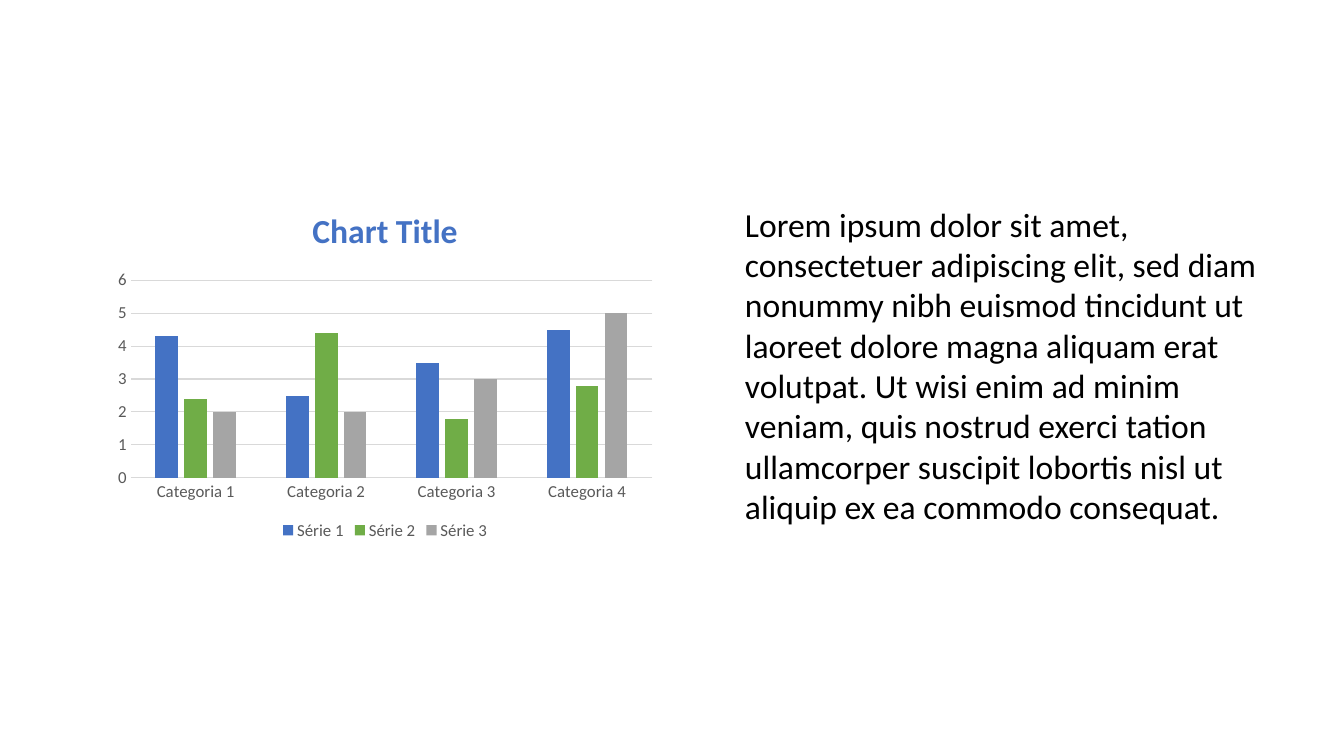
from dataclasses import dataclass

from pptx import Presentation
from pptx.chart import data as cd
from pptx.dml.color import RGBColor
from pptx.enum import chart as ce, text as te
from pptx.util import Inches, Pt

FONT = "Calibri"
BLUE, GREY, PALE = "4472C4", "595959", "D9D9D9"


@dataclass
class Series:
    name: str
    vals: tuple[float, ...]
    color: str


CATS = [f"Categoria {n}" for n in range(1, 5)]
SERIES = [
    Series("Série 1", (4.3, 2.5, 3.5, 4.5), BLUE),
    Series("Série 2", (2.4, 4.4, 1.8, 2.8), "70AD47"),
    Series("Série 3", (2, 2, 3, 5), "A5A5A5"),
]
BODY = (
    "Lorem ipsum dolor sit amet, consectetuer adipiscing elit, sed diam "
    "nonummy nibh euismod tincidunt ut laoreet dolore magna aliquam erat "
    "volutpat. Ut wisi enim ad minim veniam, quis nostrud exerci tation "
    "ullamcorper suscipit lobortis nisl ut aliquip ex ea commodo consequat."
)


def paint(fill, color: str) -> None:
    fill.solid()
    fill.fore_color.rgb = RGBColor.from_string(color)


def style(font, size: float, color: str, bold: bool = False) -> None:
    font.name, font.size, font.bold = FONT, Pt(size), bold
    paint(font.fill, color)


def rule(line) -> None:
    line.width = Pt(0.75)
    paint(line.fill, PALE)


def add_bars(slide) -> None:
    data = cd.CategoryChartData()
    data.categories = CATS
    for item in SERIES:
        data.add_series(item.name, item.vals)
    chart = slide.shapes.add_chart(
        ce.XL_CHART_TYPE.COLUMN_CLUSTERED,
        Inches(1.06), Inches(1.88), Inches(5.52), Inches(3.52), data,
    ).chart
    style(chart.font, 10, "000000")

    # Title and legend
    chart.has_title = True
    head = chart.chart_title
    head.include_in_layout = False
    head.text_frame.text = "Chart Title"
    style(head.text_frame.paragraphs[0].font, 24, BLUE, bold=True)
    chart.has_legend = True
    chart.legend.position = ce.XL_LEGEND_POSITION.BOTTOM
    chart.legend.include_in_layout = False
    style(chart.legend.font, 12, GREY)

    # Axes
    cat, val = chart.category_axis, chart.value_axis
    for axis in (cat, val):
        axis.major_tick_mark = axis.minor_tick_mark = ce.XL_TICK_MARK.NONE
        style(axis.tick_labels.font, 12, GREY)
    rule(cat.format.line)
    val.format.line.fill.background()
    val.minimum_scale, val.maximum_scale, val.major_unit = 0, 6, 1
    rule(val.major_gridlines.format.line)

    # Columns
    plot = chart.plots[0]
    plot.gap_width, plot.overlap = 219, -27
    plot.vary_by_categories = False
    for bars, item in zip(plot.series, SERIES):
        paint(bars.format.fill, item.color)
        bars.invert_if_negative = False


def add_body(slide) -> None:
    box = slide.shapes.add_textbox(
        Inches(7.29), Inches(1.97), Inches(5.32), Inches(3.33))
    frame = box.text_frame
    frame.word_wrap = True
    frame.auto_size = te.MSO_AUTO_SIZE.SHAPE_TO_FIT_TEXT
    frame.text = BODY
    style(frame.paragraphs[0].font, 24, "000000")


def main() -> None:
    prs = Presentation()
    prs.slide_width, prs.slide_height = Inches(13.33), Inches(7.5)
    slide = prs.slides.add_slide(prs.slide_layouts.get_by_name("Blank"))
    add_body(slide)
    add_bars(slide)
    prs.save("out.pptx")


if __name__ == "__main__":
    main()
